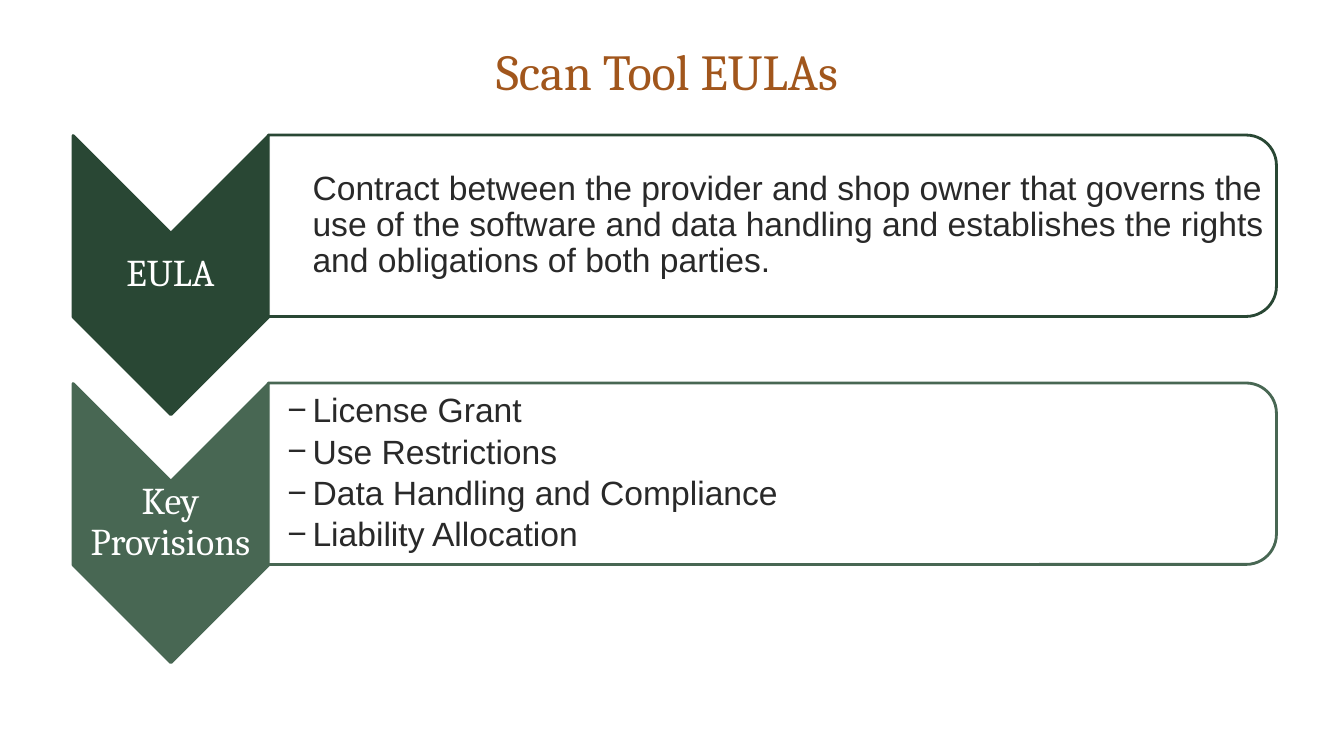
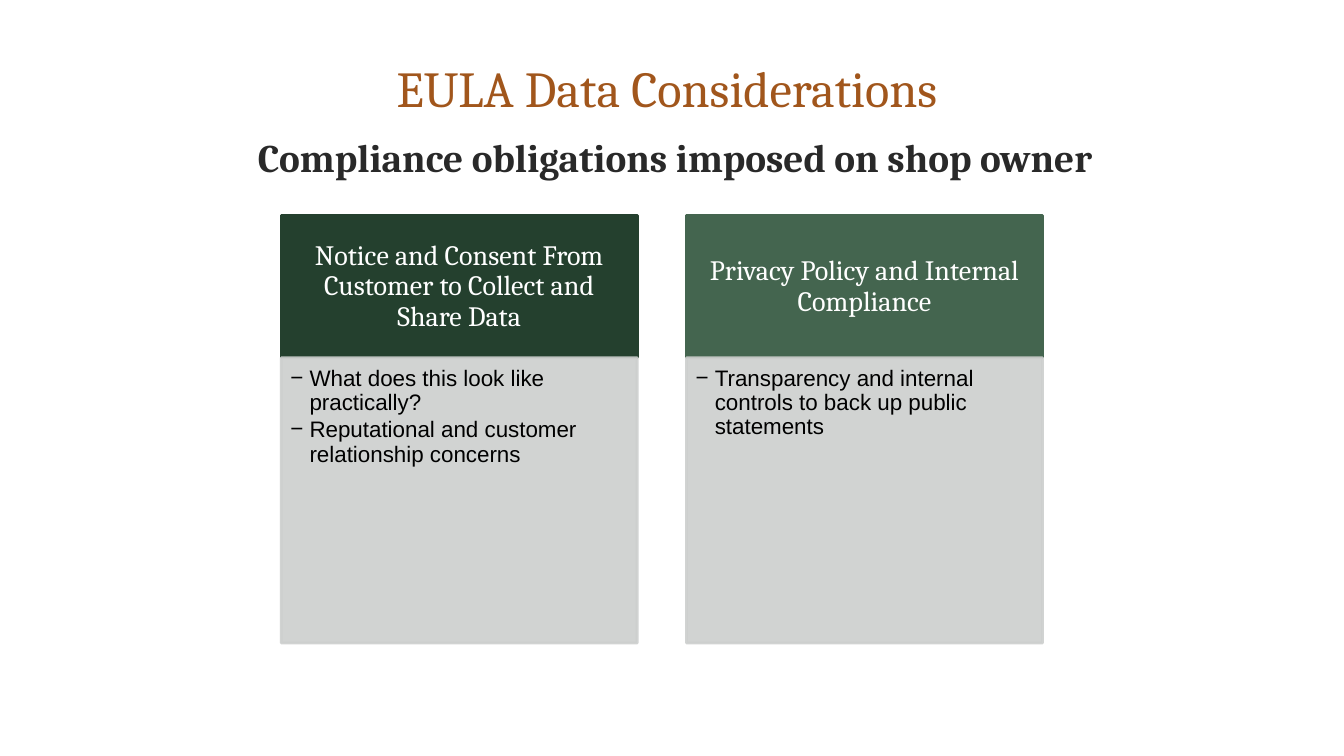
from dataclasses import dataclass
from typing import NamedTuple

from lxml.etree import SubElement
from pptx import Presentation
from pptx.dml.color import RGBColor
from pptx.dml.fill import FillFormat
from pptx.enum.shapes import MSO_SHAPE as Preset
from pptx.enum.text import MSO_ANCHOR as Anchor, MSO_AUTO_SIZE as AutoSize, PP_ALIGN as Align
from pptx.oxml.ns import qn
from pptx.shapes.autoshape import Shape
from pptx.slide import Slide
from pptx.util import Emu, Pt

EMU_PER_PX = 9144  # 100 px to the inch


def px(length: int) -> Emu:
    return Emu(length * EMU_PER_PX)


@dataclass(frozen=True)
class Theme:
    heading_font: str = "Cambria"
    body_font: str = "Arial"
    title: str = "A1561C"
    ink: str = "292929"
    black: str = "000000"
    white: str = "FFFFFF"
    panel: str = "CDCFCE"
    row_greens: tuple[str, str] = ("294734", "486753")
    card_greens: tuple[str, str] = ("24402E", "44654F")
    title_size: int = 36
    subtitle_size: int = 28
    label_size: int = 27
    row_size: int = 24
    card_head_size: int = 20
    card_size: int = 16
    line_width: int = 2
    panel_opacity: int = 90


THEME = Theme()


class Box(NamedTuple):
    left: int
    top: int
    width: int
    height: int

    def moved(self, right: int = 0, down: int = 0) -> "Box":
        return self._replace(left=self.left + right, top=self.top + down)

    def emu(self) -> list[Emu]:
        return [px(length) for length in self]


@dataclass(frozen=True)
class TextStyle:
    size: int
    color: str
    font: str = THEME.heading_font
    bold: bool = False
    align: Align = Align.CENTER
    anchor: Anchor = Anchor.MIDDLE
    insets: tuple[int, int, int, int] = (10, 5, 10, 5)
    line_spacing: float | Pt = 0.9
    after: float = 0.35  # share of the type size
    indent: int = 0
    bullet: str = ""


@dataclass(frozen=True)
class Topic:
    heading: str
    points: tuple[str, ...]
    bullet: str = "−"


TITLE = TextStyle(THEME.title_size, THEME.title, anchor=Anchor.BOTTOM,
                  line_spacing=Pt(36), after=0)
SUBTITLE = TextStyle(THEME.subtitle_size, THEME.ink, bold=True, anchor=Anchor.TOP,
                     line_spacing=1.0, after=0)
ROW_LABEL = TextStyle(THEME.label_size, THEME.white, insets=(2, 2, 2, 2))
CARD_HEAD = TextStyle(THEME.card_head_size, THEME.white, insets=(16, 9, 16, 9))
CARD_BODY = TextStyle(THEME.card_size, THEME.black, THEME.body_font, align=Align.LEFT,
                      anchor=Anchor.TOP, insets=(9, 9, 12, 14), after=0.15,
                      indent=19, bullet="−")

ROWS = (
    Topic("EULA", ("Contract between the provider and shop owner that governs the use of the "
                   "software and data handling and establishes the rights and obligations "
                   "of both parties.",), bullet=""),
    Topic("Key Provisions", ("License Grant", "Use Restrictions",
                             "Data Handling and Compliance", "Liability Allocation")),
)
CARDS = (
    Topic("Notice and Consent From Customer to Collect and Share Data",
          ("What does this look like practically?",
           "Reputational and customer relationship concerns")),
    Topic("Privacy Policy and Internal Compliance",
          ("Transparency and internal controls to back up public statements",)),
)
ROW_STEP = 246
CARD_STEP = 402


def write(shape: Shape, lines: tuple[str, ...], style: TextStyle) -> None:
    frame = shape.text_frame
    frame.word_wrap = True
    frame.vertical_anchor = style.anchor
    (frame.margin_left, frame.margin_top,
     frame.margin_right, frame.margin_bottom) = map(px, style.insets)
    for index, line in enumerate(lines):
        para = frame.add_paragraph() if index else frame.paragraphs[0]
        para.alignment = style.align
        para.line_spacing = style.line_spacing
        para.space_after = Pt(style.size * style.after)
        if style.indent:
            properties = para._p.get_or_add_pPr()
            properties.set("marL", str(px(style.indent)))
            if style.bullet:
                properties.set("indent", str(px(-style.indent)))
                SubElement(properties, qn("a:buFont"), typeface=style.font)
                SubElement(properties, qn("a:buChar"), char=style.bullet)
        span = para.add_run()
        span.text = line
        span.font.name = style.font
        span.font.size = Pt(style.size)
        span.font.bold = style.bold
        span.font.color.rgb = RGBColor.from_string(style.color)


def add_text(slide: Slide, box: Box, lines: tuple[str, ...], style: TextStyle) -> Shape:
    shape = slide.shapes.add_textbox(*box.emu())
    write(shape, lines, style)
    return shape


def paint(fill: FillFormat, color: str, opacity: int) -> None:
    """Set a solid colour with its opacity in percent."""
    fill.solid()
    fill.fore_color.rgb = RGBColor.from_string(color)
    if opacity < 100:
        value = fill._xPr.find(qn("a:solidFill")).find(qn("a:srgbClr"))
        SubElement(value, qn("a:alpha"), val=str(opacity * 1000))


def add_panel(slide: Slide, preset: Preset, box: Box, fill: str, line: str,
              fill_opacity: int = 100, line_opacity: int = 100, rotation: int = 0) -> Shape:
    shape = slide.shapes.add_shape(preset, *box.emu())
    shape.shadow.inherit = False
    shape.rotation = rotation
    paint(shape.fill, fill, fill_opacity)
    shape.line.width = Pt(THEME.line_width)
    paint(shape.line.fill, line, line_opacity)
    return shape


def add_title(slide: Slide, text: str, height: int) -> None:
    add_text(slide, Box(33, 35, 1268, height), (text,), TITLE)


def add_row(slide: Slide, row: Topic, color: str, down: int) -> None:
    """Draw a downward chevron with its label and the panel to its right."""
    add_panel(slide, Preset.CHEVRON, Box(31, 176, 277, 194).moved(down=down),
              color, color, rotation=90)
    add_text(slide, Box(72, 231, 194, 83).moved(down=down), (row.heading,), ROW_LABEL)
    add_panel(slide, Preset.ROUND_2_SAME_RECTANGLE, Box(676, -276, 180, 1000).moved(down=down),
              THEME.white, color, fill_opacity=THEME.panel_opacity, rotation=90)
    style = TextStyle(THEME.row_size, THEME.ink, THEME.body_font, align=Align.LEFT,
                      insets=(19, 2, 2, 2), after=0.15, indent=25, bullet=row.bullet)
    add_text(slide, Box(266, 143, 991, 162).moved(down=down), row.points, style)


def add_card(slide: Slide, card: Topic, color: str, right: int) -> None:
    head = add_panel(slide, Preset.RECTANGLE, Box(279, 214, 353, 141).moved(right), color, color)
    write(head, (card.heading,), CARD_HEAD)
    body = add_panel(slide, Preset.RECTANGLE, Box(279, 355, 353, 283).moved(right),
                     THEME.panel, THEME.panel, THEME.panel_opacity, THEME.panel_opacity)
    write(body, card.points, CARD_BODY)


def main() -> None:
    deck = Presentation()
    deck.slide_width, deck.slide_height = px(1333), px(750)
    blank = deck.slide_layouts[6]

    page = deck.slides.add_slide(blank)
    add_title(page, "Scan Tool EULAs ", 70)
    for index, (row, color) in enumerate(zip(ROWS, THEME.row_greens)):
        add_row(page, row, color, index * ROW_STEP)

    page = deck.slides.add_slide(blank)
    add_title(page, "EULA Data Considerations ", 87)
    for index, (card, color) in enumerate(zip(CARDS, THEME.card_greens)):
        add_card(page, card, color, index * CARD_STEP)
    subtitle = add_text(page, Box(154, 127, 1031, 57),
                        ("Compliance obligations imposed on shop owner",), SUBTITLE)
    subtitle.text_frame.auto_size = AutoSize.SHAPE_TO_FIT_TEXT

    deck.save("out.pptx")


if __name__ == "__main__":
    main()
